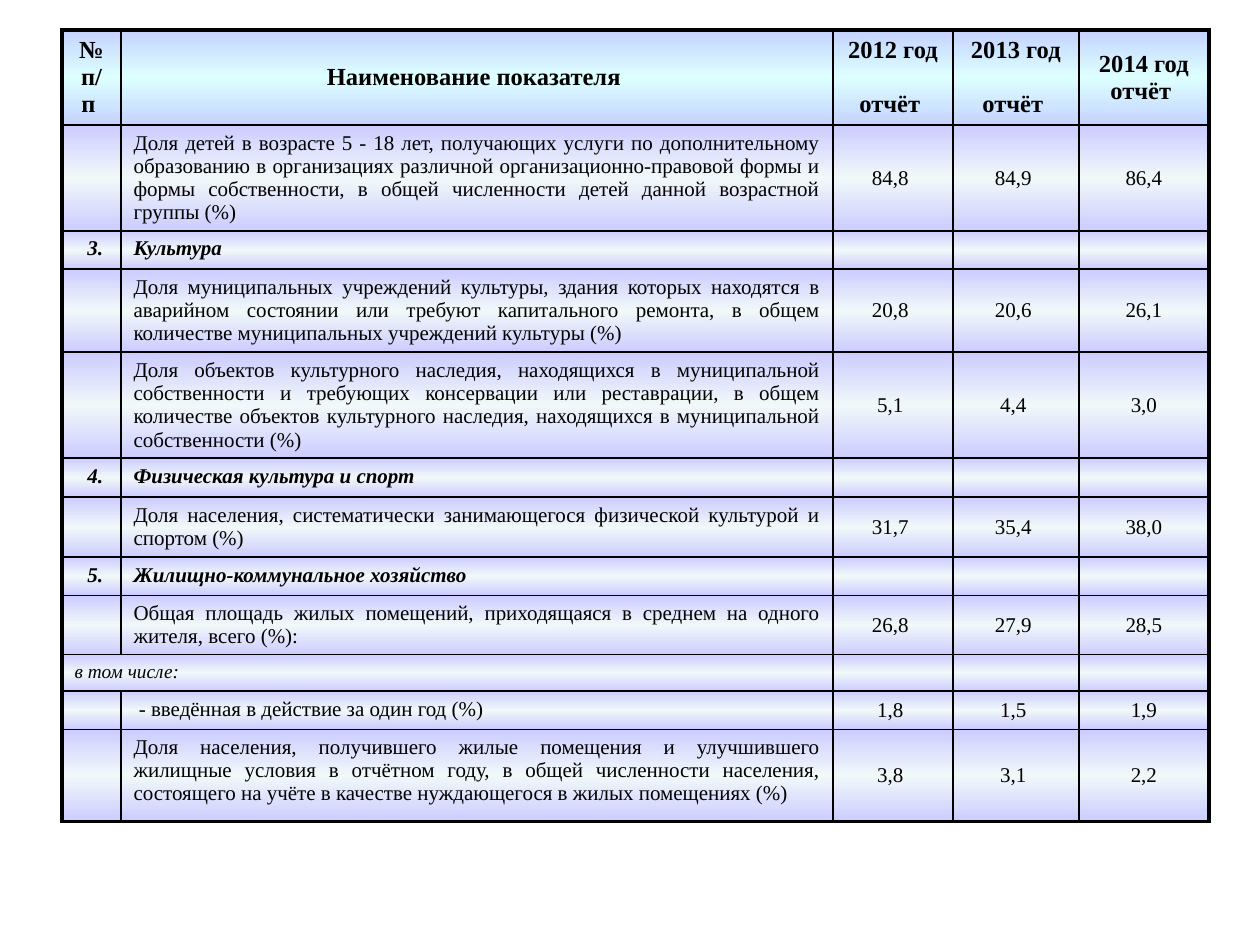
from lxml import etree
from pptx import Presentation
from pptx.dml.color import RGBColor
from pptx.enum.text import MSO_ANCHOR, PP_ALIGN
from pptx.oxml.ns import qn
from pptx.util import Emu, Pt

CENTER, JUSTIFY, RIGHT = PP_ALIGN.CENTER, PP_ALIGN.JUSTIFY, PP_ALIGN.RIGHT
TOP, MIDDLE = MSO_ANCHOR.TOP, MSO_ANCHOR.MIDDLE
PX = 914400 // 126
FONT = "Times New Roman"
COLORS = {
    "ink": "000000",
    "head_edge": "C5D3FF", "head_mid": "DDFFFF",
    "body_edge": "CCCCFF", "body_mid": "F1F8F9",
}
THIN, THICK = Pt(1), Pt(2.25)

# Kind of row, height in px, cell texts
ROWS = [
    ("head", 95, ["№ п/п ", "Наименование показателя ", "2012 год\nотчёт ",
                  "2013 год\nотчёт ", "2014 год\nотчёт "]),
    ("data", 106, ["", "Доля детей в возрасте 5 - 18 лет, получающих услуги по "
                   "дополнительному образованию в организациях различной "
                   "организационно-правовой формы и формы собственности, в общей "
                   "численности детей данной возрастной группы (%) ",
                   "84,8 ", "84,9 ", "86,4"]),
    ("section", 36, ["3. ", "Культура ", "", "", ""]),
    ("data", 83, ["", "Доля муниципальных учреждений культуры, здания которых "
                  "находятся в аварийном состоянии или требуют капитального ремонта, "
                  "в общем количестве муниципальных учреждений культуры (%) ",
                  "20,8 ", "20,6 ", "26,1"]),
    ("data", 106, ["", "Доля объектов культурного наследия, находящихся в "
                   "муниципальной собственности и требующих консервации или "
                   "реставрации, в общем количестве объектов культурного наследия, "
                   "находящихся в муниципальной собственности (%) ",
                   "5,1 ", "4,4 ", "3,0"]),
    ("section", 39, ["4. ", "Физическая культура и спорт ", "", "", ""]),
    ("data", 60, ["", "Доля населения, систематически занимающегося физической "
                  "культурой и спортом (%) ", "31,7 ", "35,4 ", "38,0"]),
    ("section", 36, ["5. ", "Жилищно-коммунальное хозяйство ", "", "", ""]),
    ("data", 59, ["", "Общая площадь жилых помещений, приходящаяся в среднем на "
                  "одного жителя, всего (%):", "26,8 ", "27,9 ", "28,5"]),
    ("including", 36, ["в том числе: ", "", "", "", ""]),
    ("data", 36, ["", " - введённая в действие за один год (%) ",
                  "1,8 ", "1,5 ", "1,9"]),
    ("data", 92, ["", "Доля населения, получившего жилые помещения и улучшившего "
                  "жилищные условия в отчётном году, в общей численности населения, "
                  "состоящего на учёте в качестве нуждающегося в жилых помещениях (%) ",
                  "3,8 ", "3,1 ", "2,2"]),
]
COLUMN_WIDTHS = [59, 712, 120, 126, 130]
LEFT, TABLE_TOP = 62, 30

# Size, bold, italic
STYLES = {
    "head": (14, True, False),
    "data": (12, False, False),
    "section": (12, True, True),
    "including": (11, False, True),
}


def add_color(parent, color):
    etree.SubElement(parent, qn("a:srgbClr"), val=COLORS[color])


def paint_cell(cell, row, column, band):
    """Add the four borders, then a vertical three-stop gradient."""
    properties = cell._tc.get_or_add_tcPr()
    outer = {
        "L": column == 0, "R": column == len(COLUMN_WIDTHS) - 1,
        "T": row == 0, "B": row == len(ROWS) - 1,
    }
    for side, is_outer in outer.items():
        line = etree.SubElement(properties, qn(f"a:ln{side}"),
                                w=str(THICK if is_outer else THIN))
        add_color(etree.SubElement(line, qn("a:solidFill")), "ink")
    gradient = etree.SubElement(properties, qn("a:gradFill"), rotWithShape="1")
    stops = etree.SubElement(gradient, qn("a:gsLst"))
    for position, part in ((0, "edge"), (50000, "mid"), (100000, "edge")):
        stop = etree.SubElement(stops, qn("a:gs"), pos=str(position))
        add_color(stop, f"{band}_{part}")
    etree.SubElement(gradient, qn("a:lin"), ang="5400000", scaled="1")


def write_cell(cell, text, kind, column):
    size, bold, italic = STYLES[kind]
    centered = kind == "head" or column > 1
    cell.vertical_anchor = MIDDLE if centered else TOP
    cell.text_frame.text = text
    for paragraph in cell.text_frame.paragraphs:
        if centered:
            paragraph.alignment = CENTER
        else:
            paragraph.alignment = RIGHT if kind == "section" and column == 0 else JUSTIFY
        for run in paragraph.runs:
            font = run.font
            font.name, font.size, font.bold, font.italic = FONT, Pt(size), bold, italic
            font.color.rgb = RGBColor.from_string(COLORS["ink"])
        if not text:  # keeps an empty cell from stretching its row
            etree.SubElement(paragraph._p, qn("a:endParaRPr"), sz=str(size * 100))


def main():
    deck = Presentation()
    deck.slide_width, deck.slide_height = Emu(1260 * PX), Emu(945 * PX)
    slide = deck.slides.add_slide(deck.slide_layouts[6])
    heights = [height for _, height, _ in ROWS]
    indicators = slide.shapes.add_table(
        len(ROWS), len(COLUMN_WIDTHS), LEFT * PX, TABLE_TOP * PX,
        sum(COLUMN_WIDTHS) * PX, sum(heights) * PX).table
    indicators.horz_banding = False
    indicators.first_row = False
    for column, width in zip(indicators.columns, COLUMN_WIDTHS):
        column.width = Emu(width * PX)

    for r, (kind, height, texts) in enumerate(ROWS):
        indicators.rows[r].height = Emu(height * PX)
        for c, text in enumerate(texts):
            cell = indicators.cell(r, c)
            write_cell(cell, text, kind, c)
            paint_cell(cell, r, c, "head" if kind == "head" else "body")
        if kind == "including":
            indicators.cell(r, 0).merge(indicators.cell(r, 1))

    for c in (2, 3):  # one line of air between year and "отчёт"
        indicators.cell(0, c).text_frame.paragraphs[1].space_before = Pt(15.5)
    deck.save("out.pptx")


if __name__ == "__main__":
    main()
